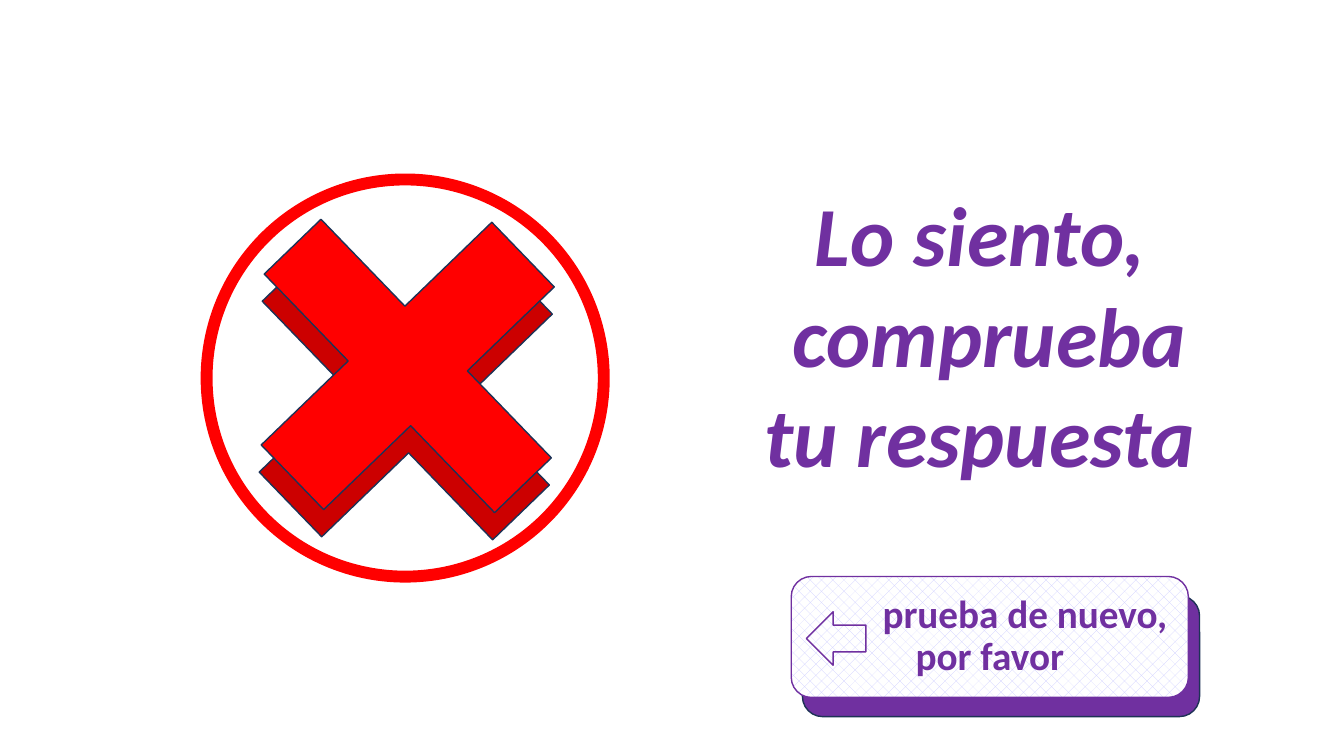
from pptx import Presentation
from pptx.dml.color import RGBColor
from pptx.enum import dml, shapes, text
from pptx.util import Pt

PURPLE = RGBColor(0x70, 0x30, 0xA0)
RED = RGBColor(0xFF, 0x00, 0x00)
DARK = RGBColor(0xCC, 0x00, 0x00)
NAVY = RGBColor(0x1E, 0x32, 0x56)
LILAC = RGBColor(0xCC, 0xCC, 0xFF)
WHITE = RGBColor(0xFF, 0xFF, 0xFF)
KIND = shapes.MSO_SHAPE


def style(par, words, size, **more):
    par.alignment = text.PP_ALIGN.CENTER
    run = par.add_run()
    run.text = words
    font = run.font
    font.color.rgb = PURPLE
    look = {"name": "Calibri", "size": Pt(size), "bold": True, **more}
    for key, value in look.items():
        setattr(font, key, value)


def draw(slide, kind, box, line, fill=None, width=1):
    shape = slide.shapes.add_shape(kind, *map(Pt, box))
    shape.shadow.inherit = False
    shape.line.color.rgb = line
    shape.line.width = Pt(width)
    if fill is None:
        shape.fill.background()
    else:
        shape.fill.solid()
        shape.fill.fore_color.rgb = fill
    return shape


def title(slide, lines, box):
    frame = slide.shapes.add_textbox(*map(Pt, box)).text_frame
    frame.word_wrap = False
    frame.auto_size = text.MSO_AUTO_SIZE.SHAPE_TO_FIT_TEXT
    for i, line in enumerate(lines):
        par = frame.add_paragraph() if i else frame.paragraphs[0]
        style(par, line, 60, italic=True)


def cross(slide, left, top, fill):
    shape = draw(slide, KIND.CROSS, (left, top, 236.9, 229), NAVY, fill)
    shape.adjustments[0] = 0.377
    shape.rotation = 46


def button(slide, words, left, top):
    size = (283.7, 86.4)
    draw(slide, KIND.ROUNDED_RECTANGLE, (left + 8, top + 13.7, *size), NAVY, PURPLE)
    face = draw(slide, KIND.ROUNDED_RECTANGLE, (left, top, *size), PURPLE)
    fill = face.fill
    fill.patterned()
    fill.pattern = dml.MSO_PATTERN.PERCENT_25
    fill.fore_color.rgb = LILAC
    fill.back_color.rgb = WHITE
    frame = face.text_frame
    frame.word_wrap = True
    frame.vertical_anchor = text.MSO_ANCHOR.MIDDLE
    par = frame.paragraphs[0]
    par.line_spacing = 0.9
    par.space_before = Pt(10)
    par._p.get_or_add_pPr().set("indent", str(Pt(50)))
    style(par, words, 28)
    draw(slide, KIND.LEFT_ARROW, (left + 10.8, top + 25.2, 42.5, 38.2), PURPLE)


def main():
    deck = Presentation()
    deck.slide_width, deck.slide_height = Pt(960), Pt(540)
    slide = deck.slides.add_slide(deck.slide_layouts[6])
    title(slide, ("Lo siento, ", "comprueba", "tu respuesta "), (537.1, 126.7, 339.1, 225.4))
    draw(slide, KIND.FLOWCHART_CONNECTOR, (147.6, 128.2, 283.7, 283.7), RED, width=8.5)
    cross(slide, 171.4, 166.3, DARK)
    cross(slide, 172.8, 146.9, RED)
    button(slide, "prueba de nuevo, por favor", 565.2, 411.8)
    deck.save("out.pptx")


if __name__ == "__main__":
    main()
